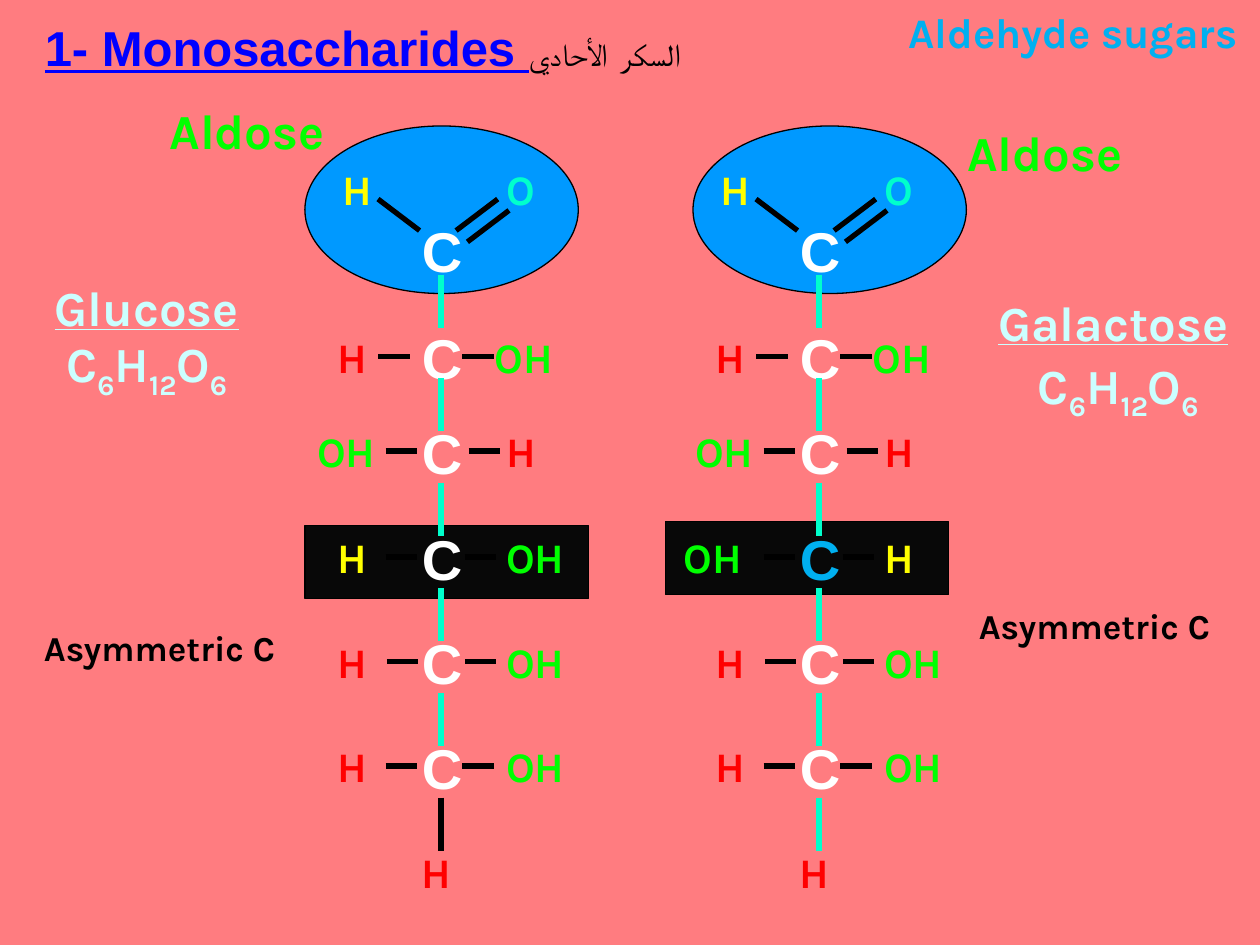
from dataclasses import dataclass
from math import isclose

from lxml.etree import SubElement
from pptx import Presentation
from pptx.dml.color import RGBColor
from pptx.enum.shapes import MSO_CONNECTOR, MSO_SHAPE
from pptx.enum.text import MSO_ANCHOR, MSO_AUTO_SIZE, PP_ALIGN
from pptx.oxml.ns import qn
from pptx.util import Inches, Pt

COLORS = {
    "background": "FF7C80", "oval": "0099FF", "frame": "080808", "black": "000000",
    "white": "FFFFFF", "green": "00FF00", "red": "FF0000", "yellow": "FFFF00",
    "teal": "00FFCC", "sky": "00B0F0", "pale": "CCFFFF", "blue": "0000FF",
}
CARBON_SIZE = (0.42, 0.62)
CARBON_LEFT = -0.25  # from the chain axis
SIDE_BOND = 0.25
CHAIN_BOND = 0.42
CHAIN_STARTS = (2.18, 3, 3.83, 4.67, 5.5, 6.33)


@dataclass
class Group:
    """A substituent, placed by its left edge from the chain axis."""
    label: str
    color: str
    left: float


@dataclass
class Row:
    """Height of a carbon's side bonds, and where each bond starts from the axis."""
    y: float
    left_bond: float
    right_bond: float


@dataclass
class Label:
    text: str
    box: tuple


@dataclass
class Sugar:
    axis: float
    oval_left: float
    frame: tuple
    groups: list
    marked_carbon: str
    last_bond: str
    aldose: Label
    asymmetric: Label
    name: Label
    formula_box: tuple


ROWS = [Row(2.83, -0.5, 0.17), Row(3.58, -0.44, 0.22), Row(4.42, -0.44, 0.19),
        Row(5.25, -0.43, 0.19), Row(6.08, -0.44, 0.17)]
MARKED_ROW = 2

H_LEFT = Group("H", "red", -0.92)
OH_RIGHT = Group("OH", "green", 0.42)
TOP = (H_LEFT, Group("OH", "green", 0.33))
SECOND = (Group("OH", "green", -1.08), Group("H", "red", 0.42))
LOWER = (H_LEFT, OH_RIGHT)

SUGARS = [
    Sugar(3.5, 2.42, (2.42, 4.17, 2.25, 0.58),
          [TOP, SECOND, (Group("H", "yellow", -0.92), OH_RIGHT), LOWER, LOWER],
          "white", "black",
          Label("Aldose", (1.17, 0.75, 1.58, 0.57)),
          Label("Asymmetric C", (0.25, 4.92, 2.25, 0.43)),
          Label("Glucose", (0.25, 2.15, 1.83, 0.57)), (0.25, 2.6, 1.83, 0.57)),
    Sugar(6.5, 5.5, (5.28, 4.14, 2.25, 0.58),
          [TOP, SECOND,
           (Group("OH", "green", -1.17), Group("H", "yellow", 0.42)), LOWER, LOWER],
          "sky", "teal",
          Label("Aldose", (7.5, 0.92, 1.58, 0.57)),
          Label("Asymmetric C", (7.67, 4.75, 2.25, 0.43)),
          Label("Galactose", (7.75, 2.27, 2.17, 0.57)), (8, 2.77, 1.75, 0.57)),
]


def rgb(color: str) -> RGBColor:
    return RGBColor.from_string(COLORS[color])


def write(paragraph, text: str, *, size=28, color="black", font="Karla",
          bold=True, underline=False, subscript=False) -> None:
    run = paragraph.add_run()
    run.text = text
    run.font.size, run.font.name = Pt(size), font
    run.font.bold, run.font.underline = bold, underline
    run.font.color.rgb = rgb(color)
    if subscript:
        run.font._element.set("baseline", "-25000")


def add_text(slide, box: tuple, text: str = "", align=PP_ALIGN.LEFT, **style):
    textbox = slide.shapes.add_textbox(*map(Inches, box))
    frame = textbox.text_frame
    frame.word_wrap = True
    frame.auto_size = MSO_AUTO_SIZE.SHAPE_TO_FIT_TEXT
    frame.paragraphs[0].alignment = align
    if text:
        write(frame.paragraphs[0], text, **style)
    return textbox


def add_panel(slide, kind, box: tuple, color: str) -> None:
    panel = slide.shapes.add_shape(kind, *map(Inches, box))
    panel.shadow.inherit = False
    panel.fill.solid()
    panel.fill.fore_color.rgb = rgb(color)
    panel.line.color.rgb = rgb("black")
    panel.line.width = Pt(0.75)


def add_bond(slide, start: tuple, end: tuple, color: str = "black"):
    bond = slide.shapes.add_connector(MSO_CONNECTOR.STRAIGHT, *map(Inches, start + end))
    bond.line.color.rgb = rgb(color)
    bond.line.width = Pt(3)
    SubElement(bond._element.spPr, qn("a:effectLst"))
    return bond


def add_carbon(slide, axis: float, top: float, color: str = "white"):
    return add_text(slide, (axis + CARBON_LEFT, top, *CARBON_SIZE), "C",
                    size=32, color=color, font="Arial")


def add_group(slide, axis: float, y: float, group: Group):
    width = 0.75 if group.label == "OH" else 0.58
    return add_text(slide, (axis + group.left, y - 0.25, width, 0.5), group.label,
                    size=24, color=group.color)


def add_row(slide, axis: float, row: Row, groups: tuple, carbon_color: str) -> None:
    """Draw a carbon with its two substituents, joining bonds that touch a box."""
    carbon = add_carbon(slide, axis, row.y - CARBON_SIZE[1] / 2, carbon_color)
    _, right_group = [add_group(slide, axis, row.y, group) for group in groups]
    left_bond, right_bond = [
        add_bond(slide, (axis + start, row.y), (axis + start + SIDE_BOND, row.y))
        for start in (row.left_bond, row.right_bond)]
    if isclose(row.left_bond + SIDE_BOND, CARBON_LEFT):
        left_bond.end_connect(carbon, 1)
    if isclose(row.right_bond, CARBON_LEFT + CARBON_SIZE[0]):
        right_bond.begin_connect(carbon, 3)
    if isclose(row.right_bond + SIDE_BOND, groups[1].left):
        right_bond.end_connect(right_group, 1)


def add_aldehyde(slide, axis: float) -> None:
    add_carbon(slide, axis, 1.67)
    add_group(slide, axis, 1.5, Group("H", "yellow", -0.88))
    add_group(slide, axis, 1.5, Group("O", "teal", 0.42))
    add_bond(slide, (axis - 0.17, 1.83), (axis - 0.5, 1.58))
    for x, y in ((0.12, 1.83), (0.21, 1.92)):
        add_bond(slide, (axis + x, y), (axis + x + 0.33, y - 0.25))


def add_sugar(slide, sugar: Sugar) -> None:
    add_panel(slide, MSO_SHAPE.OVAL, (sugar.oval_left, 1, 2.17, 1.33), "oval")
    add_panel(slide, MSO_SHAPE.RECTANGLE, sugar.frame, "frame")
    add_aldehyde(slide, sugar.axis)
    for index, (row, groups) in enumerate(zip(ROWS, sugar.groups)):
        add_row(slide, sugar.axis, row, groups,
                sugar.marked_carbon if index == MARKED_ROW else "white")
    for y in CHAIN_STARTS:
        add_bond(slide, (sugar.axis, y), (sugar.axis, y + CHAIN_BOND),
                 sugar.last_bond if y == CHAIN_STARTS[-1] else "teal")
    add_group(slide, sugar.axis, 6.92, Group("H", "red", -0.25))

    center = PP_ALIGN.CENTER
    add_text(slide, sugar.aldose.box, sugar.aldose.text, center, color="green")
    add_text(slide, sugar.asymmetric.box, sugar.asymmetric.text, size=20)
    add_text(slide, sugar.name.box, sugar.name.text, center, color="pale", underline=True)
    formula = add_text(slide, sugar.formula_box, align=center)
    for part in ("C", "6", "H", "12", "O", "6"):
        write(formula.text_frame.paragraphs[0], part, color="pale",
              subscript=part.isdigit())


def add_title(slide) -> None:
    title = slide.shapes.title
    title.left, title.top, title.width, title.height = map(Inches, (0.17, 0.08, 5.42, 0.58))
    frame = title.text_frame
    frame.word_wrap = True
    frame.auto_size = MSO_AUTO_SIZE.NONE
    frame.vertical_anchor = MSO_ANCHOR.MIDDLE
    heading = frame.paragraphs[0]
    heading.alignment = PP_ALIGN.CENTER
    write(heading, "1- Monosaccharides ", color="blue", font="Arial", underline=True)
    for text, size in (("السكر", 18), (" ", 28), ("الأحادي", 18)):
        write(heading, text, size=size, font="Arial", bold=False)


def main() -> None:
    prs = Presentation()
    prs.slide_width, prs.slide_height = Inches(10), Inches(7.5)
    slide = prs.slides.add_slide(prs.slide_layouts[5])
    slide.background.fill.solid()
    slide.background.fill.fore_color.rgb = rgb("background")
    add_title(slide)
    for sugar in SUGARS:
        add_sugar(slide, sugar)
    add_text(slide, (6.92, 0, 3, 0.5), "Aldehyde sugars", PP_ALIGN.RIGHT,
             size=24, color="sky")
    prs.save("out.pptx")


if __name__ == "__main__":
    main()
